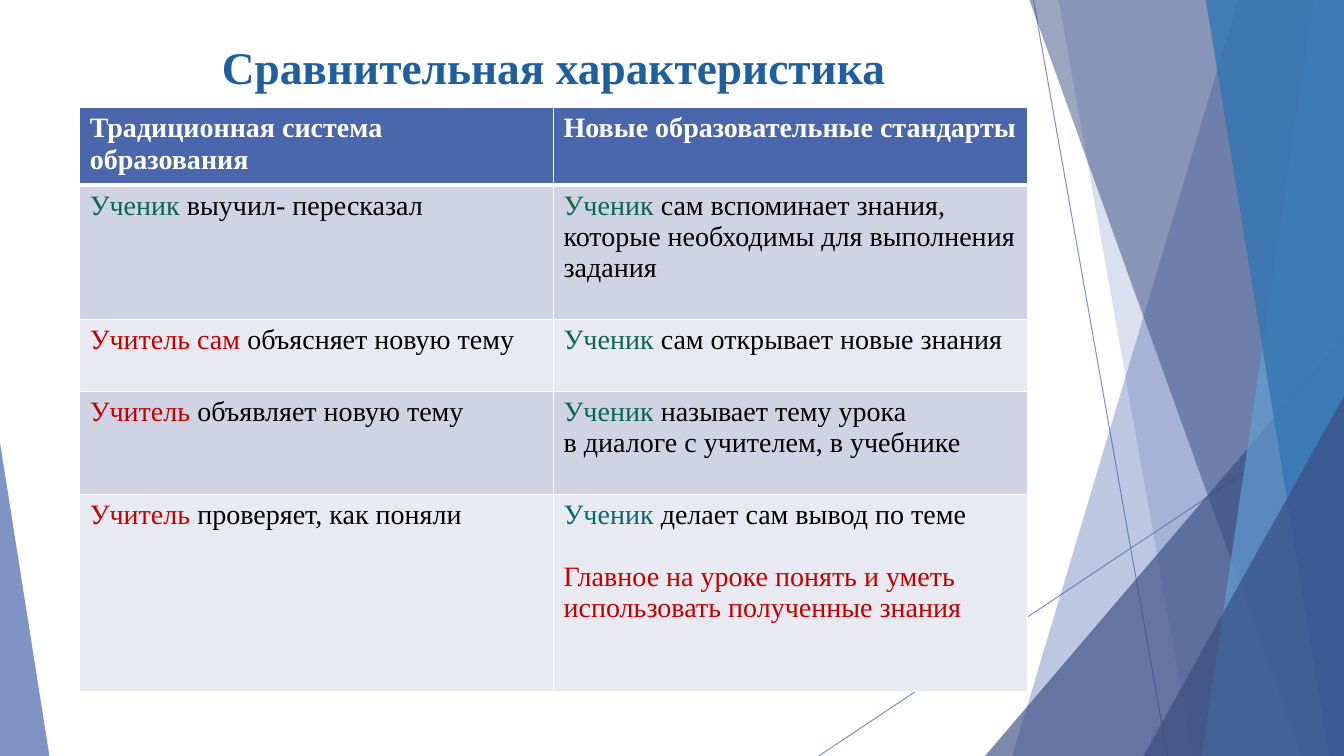
import dataclasses

import lxml.etree
import pptx
import pptx.dml.color
import pptx.enum.shapes
import pptx.enum.text
import pptx.oxml
import pptx.oxml.ns
import pptx.util

Inches = pptx.util.Inches
Pt = pptx.util.Pt
Color = pptx.dml.color.RGBColor.from_string
qn = pptx.oxml.ns.qn


@dataclasses.dataclass(frozen=True)
class Theme:
    font: str = "Times New Roman"
    title_size: float = 32.4
    body_size: float = 20
    title: str = "1F5FA0"
    white: str = "FFFFFF"
    black: str = "000000"
    green: str = "08674D"
    teal: str = "05686D"
    red: str = "C10000"
    blue: str = "4A66AC"
    navy: str = "384C81"
    sky: str = "629DD1"
    azure: str = "3477B2"
    band_dark: str = "D0D3E3"
    band_light: str = "E9EAF1"


theme = Theme()
WIDTH, HEIGHT = 13.33, 7.5


def set_opacity(shape, percent):
    for color in shape._element.spPr.iter(qn("a:srgbClr")):
        lxml.etree.SubElement(color, qn("a:alpha")).set("val", str(percent * 1000))


def style_span(span, size, color, bold):
    span.font.name = theme.font
    span.font.size = Pt(size)
    span.font.bold = bold
    span.font.color.rgb = Color(color)


deck = pptx.Presentation()
deck.slide_width, deck.slide_height = Inches(WIDTH), Inches(HEIGHT)
page = deck.slides.add_slide(deck.slide_layouts[6])

# Thin background lines
for start_x, start_y, end_x in [(10.25, 0, 11.58), (WIDTH, 4.03, 8.12)]:
    line = page.shapes.add_connector(
        pptx.enum.shapes.MSO_CONNECTOR.STRAIGHT,
        Inches(start_x), Inches(start_y), Inches(end_x), Inches(HEIGHT))
    line.line.color.rgb = Color(theme.blue)
    line.line.width = Pt(0.75)
    set_opacity(line, 70)
    lxml.etree.SubElement(line._element.spPr, qn("a:effectLst"))

# Facets from back to front. A band runs from its slanted left edge to the
# right side of the page; a triangle stands on the bottom of the page.
facets = [
    ("band", (12.28, 10.04), theme.blue, 36),
    ("band", (10.5, 11.83), theme.blue, 20),
    ("triangle", (9.77, 3.33, 3.56, 1), theme.navy, 66),
    ("band", (10.21, 12.91), theme.navy, 50),
    ("band", (13.03, 11.92), theme.sky, 70),
    ("band", (11.96, 13.18), theme.azure, 80),
    ("triangle", (11.34, 3.93, 1.99, 1), theme.navy, 66),
    ("triangle", (0, 4.39, 0.49, 0), theme.blue, 70),
]
for kind, place, color, opacity in facets:
    if kind == "band":
        top_x, bottom_x = place
        outline = page.shapes.build_freeform(Inches(top_x), 0)
        outline.add_line_segments([
            (Inches(WIDTH), 0), (Inches(WIDTH), Inches(HEIGHT)),
            (Inches(bottom_x), Inches(HEIGHT))])
        facet = outline.convert_to_shape()
    else:
        left, top, width, apex = place
        facet = page.shapes.add_shape(
            pptx.enum.shapes.MSO_SHAPE.ISOSCELES_TRIANGLE,
            Inches(left), Inches(top), Inches(width), Inches(HEIGHT - top))
        facet.adjustments[0] = apex
    facet.shadow.inherit = False
    facet.fill.solid()
    facet.fill.fore_color.rgb = Color(color)
    facet.line.fill.background()
    set_opacity(facet, opacity)

# Title
title = page.shapes.add_textbox(Inches(0.79), Inches(0.29), Inches(9.4), Inches(0.78))
frame = title.text_frame
frame.word_wrap = True
frame.vertical_anchor = pptx.enum.text.MSO_ANCHOR.MIDDLE
frame.margin_bottom = Inches(0.1)
frame.text = "Сравнительная характеристика"
frame.paragraphs[0].alignment = pptx.enum.text.PP_ALIGN.CENTER
style_span(frame.paragraphs[0].runs[0], theme.title_size, theme.title, True)

# Comparison table: each cell is (first words, their colour, rest, further lines)
headings = ["Традиционная система образования", "Новые образовательные стандарты"]
comparison = [
    [("Ученик ", theme.green, "выучил- пересказал", []),
     ("Ученик ", theme.green, "сам вспоминает знания,",
      ["которые необходимы для выполнения", "задания"])],
    [("Учитель сам ", theme.red, "объясняет новую тему", []),
     ("Ученик ", theme.green, "сам открывает новые знания", [])],
    [("Учитель ", theme.red, "объявляет новую тему", []),
     ("Ученик ", theme.green, "называет тему урока",
      ["в диалоге с учителем, в учебнике"])],
    [("Учитель ", theme.red, "проверяет, как поняли", []),
     ("Ученик ", theme.teal, "делает сам вывод по теме", [])],
]
conclusion = ["Главное на уроке понять и уметь", "использовать полученные знания"]
row_heights = [0.72, 1.33, 0.72, 1.02, 1.95]

table = page.shapes.add_table(
    len(row_heights), len(headings), Inches(0.79), Inches(1.07),
    Inches(9.4), Inches(sum(row_heights))).table
for row, height in zip(table.rows, row_heights):
    row.height = Inches(height)

for row_index in range(len(row_heights)):
    for column_index, heading in enumerate(headings):
        cell = table.cell(row_index, column_index)
        if row_index == 0:
            fill = theme.blue
            lines = [[(heading, theme.white)]]
        else:
            fill = theme.band_dark if row_index % 2 else theme.band_light
            lead, lead_color, rest, further = comparison[row_index - 1][column_index]
            lines = [[(lead, lead_color), (rest, theme.black)]]
            lines += [[(text, theme.black)] for text in further]

        is_last = (row_index, column_index) == (len(comparison), 1)
        if is_last:
            lines += [[(text, theme.red)] for text in conclusion]

        frame = cell.text_frame
        for line_index, spans in enumerate(lines):
            para = frame.paragraphs[0] if line_index == 0 else frame.add_paragraph()
            if is_last and line_index == 1:
                para.space_before = Pt(22)
            for text, color in spans:
                span = para.add_run()
                span.text = text
                style_span(span, theme.body_size, color, row_index == 0)

        properties = cell._tc.get_or_add_tcPr()
        for side in ("lnL", "lnR", "lnT", "lnB"):
            heavy = (row_index, side) in [(0, "lnB"), (1, "lnT")]
            border = lxml.etree.SubElement(properties, qn("a:" + side))
            border.set("w", str(Pt(3 if heavy else 1)))
            paint = lxml.etree.SubElement(border, qn("a:solidFill"))
            lxml.etree.SubElement(paint, qn("a:srgbClr")).set("val", theme.white)
        cell.fill.solid()
        cell.fill.fore_color.rgb = Color(fill)

deck.save("out.pptx")
